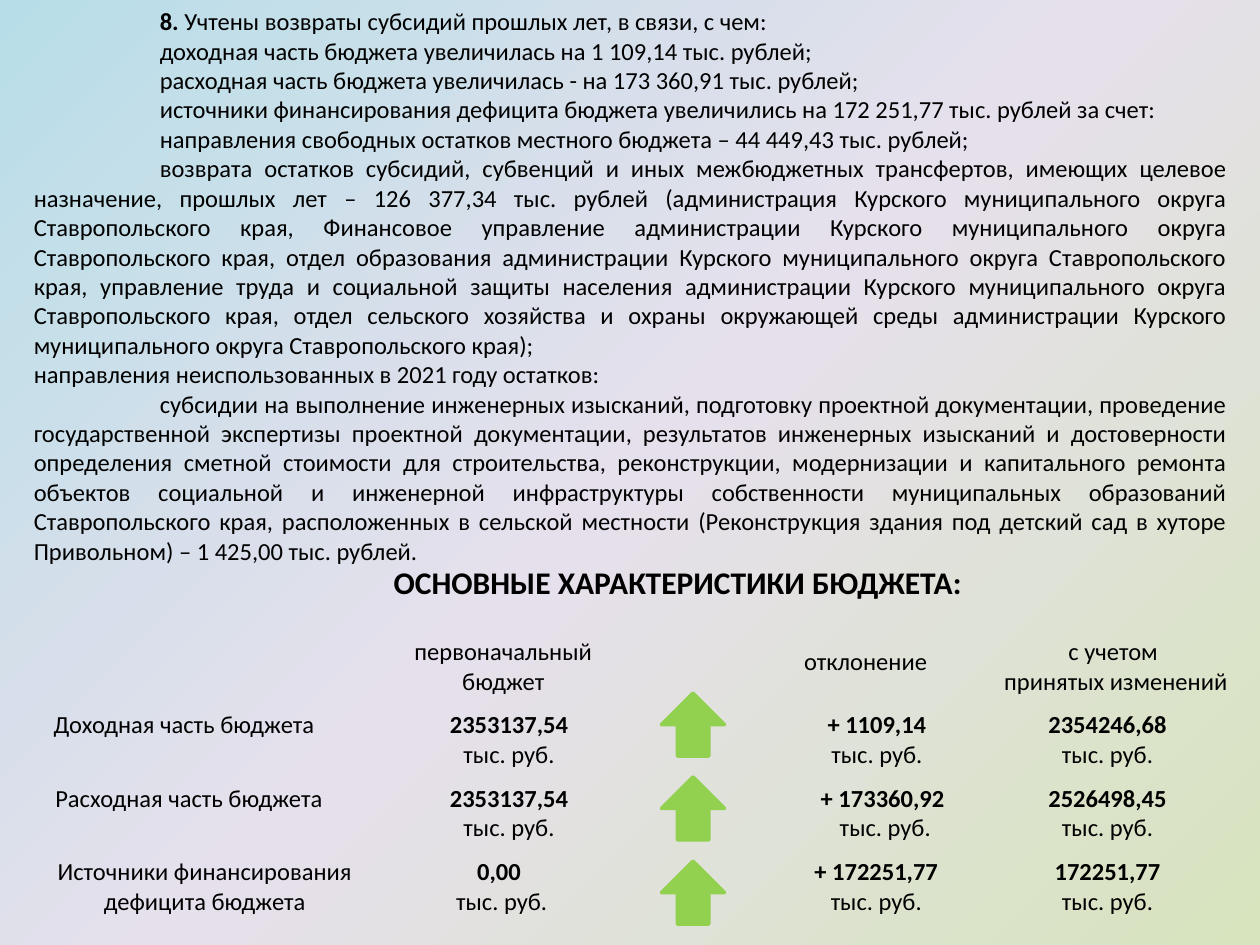
"""Build the slide on returned subsidies and the main budget characteristics."""

from pptx import Presentation
from pptx.dml.color import RGBColor
from pptx.enum.shapes import MSO_SHAPE
from pptx.enum.text import MSO_AUTO_SIZE, PP_ALIGN
from pptx.oxml import parse_xml
from pptx.oxml.ns import nsdecls, qn
from pptx.util import Inches, Pt

COLORS = {"text": "000000", "arrow": "92D050", "green": "D7E4BD", "lilac": "E6E0EC", "blue": "B7DEE8"}
FONT = "Calibri"
GRADIENT = [(0, "green"), (50, "lilac"), (100, "blue")]

NOTE = [
    [("8. ", True), ("Учтены возвраты субсидий прошлых лет, в связи, с чем:", False)],
    "доходная часть бюджета увеличилась на 1 109,14 тыс. рублей;",
    "расходная часть бюджета увеличилась - на 173 360,91 тыс. рублей;",
    "источники финансирования дефицита бюджета увеличились на 172 251,77 тыс. рублей за счет:",
    "направления свободных остатков местного бюджета – 44 449,43 тыс. рублей;",
    "возврата остатков субсидий, субвенций и иных межбюджетных трансфертов, имеющих целевое "
    "назначение, прошлых лет – 126 377,34 тыс. рублей (администрация Курского муниципального округа "
    "Ставропольского края, Финансовое управление администрации Курского муниципального округа "
    "Ставропольского края, отдел образования администрации Курского муниципального округа "
    "Ставропольского края, управление труда и социальной защиты населения администрации Курского "
    "муниципального округа Ставропольского края, отдел сельского хозяйства и охраны окружающей среды "
    "администрации Курского муниципального округа Ставропольского края);",
    "направления неиспользованных в 2021 году остатков:",
    "субсидии на выполнение инженерных изысканий, подготовку проектной документации, проведение "
    "государственной экспертизы проектной документации, результатов инженерных изысканий и "
    "достоверности определения сметной стоимости для строительства, реконструкции, модернизации и "
    "капитального ремонта объектов социальной и инженерной инфраструктуры собственности муниципальных "
    "образований Ставропольского края, расположенных в сельской местности (Реконструкция здания под "
    "детский сад в хуторе Привольном) – 1 425,00 тыс. рублей.",
]
UNINDENTED = {6}
TITLE = "ОСНОВНЫЕ ХАРАКТЕРИСТИКИ БЮДЖЕТА:"
UNIT = "тыс. руб."

HEADERS = [
    (["первоначальный", "бюджет"], 2.83, 5, 2.33),
    (["отклонение"], 6.08, 5.08, 1.58),
    (["с учетом", " принятых изменений"], 7.67, 5, 2.33),
]
ROWS = [
    (("Доходная часть бюджета", 0, 2.92),
     [("2353137,54", UNIT, 3.25, 1.58), ("+ 1109,14", UNIT, 6.25, 1.42), ("2354246,68", UNIT, 7.83, 1.92)]),
    (("Расходная часть бюджета", 0, 3),
     [("2353137,54", UNIT, 3.25, 1.58), ("+ 173360,92", " " + UNIT, 6.17, 1.67), ("2526498,45", UNIT, 8, 1.58)]),
    (("Источники финансирования дефицита бюджета", 0, 3.25),
     [("0,00", " " + UNIT, 3.17, 1.58), ("+ 172251,77", UNIT, 6.08, 1.75), ("172251,77", UNIT, 8, 1.58)]),
]
ROW_TOP, ROW_STEP = 5.58, 7 / 12
ARROW_LEFT, ARROW_TOP, ARROW_STEP, ARROW_SIZE = 5.25, 5.5, 2 / 3, 0.5


def add_text(slide, paragraphs, left, top, width, height, *, size=14, bold=False,
             align=PP_ALIGN.CENTER, wrap=True, indent=0, unindented=()):
    """Add a text box; a paragraph is a string or a list of (text, bold) runs."""
    box = slide.shapes.add_textbox(Inches(left), Inches(top), Inches(width), Inches(height))
    frame = box.text_frame
    frame.word_wrap = wrap
    frame.auto_size = MSO_AUTO_SIZE.SHAPE_TO_FIT_TEXT
    for index, content in enumerate(paragraphs):
        paragraph = frame.add_paragraph() if index else frame.paragraphs[0]
        paragraph.alignment = align
        if indent and index not in unindented:
            properties = paragraph._p.get_or_add_pPr()
            properties.set("marL", "0")
            properties.set("indent", str(Inches(indent)))
        for text, run_bold in [(content, bold)] if isinstance(content, str) else content:
            run = paragraph.add_run()
            run.text = text
            run.font.name = FONT
            run.font.size = Pt(size)
            run.font.bold = run_bold
            run.font.color.rgb = RGBColor.from_string(COLORS["text"])


def add_arrow(slide, top):
    """Add a green arrow that points up."""
    arrow = slide.shapes.add_shape(MSO_SHAPE.DOWN_ARROW, Inches(ARROW_LEFT), Inches(top),
                                   Inches(ARROW_SIZE), Inches(ARROW_SIZE))
    arrow.rotation = 180
    arrow.shadow.inherit = False
    color = RGBColor.from_string(COLORS["arrow"])
    arrow.fill.solid()
    arrow.fill.fore_color.rgb = color
    arrow.line.color.rgb = color
    arrow.line.width = Pt(2)


def set_background(slide):
    """Fill the background with a gradient centred on the bottom right corner."""
    slide.background.fill.solid()
    background = slide.element.find(".//" + qn("p:bgPr"))
    stops = "".join(f'<a:gs pos="{position * 1000}"><a:srgbClr val="{COLORS[name]}"/></a:gs>'
                    for position, name in GRADIENT)
    gradient = parse_xml(
        f'<a:gradFill {nsdecls("a")} rotWithShape="1"><a:gsLst>{stops}</a:gsLst>'
        '<a:path path="circle"><a:fillToRect l="100000" t="100000"/></a:path></a:gradFill>')
    background.replace(background[0], gradient)


def main():
    """Build and save the presentation."""
    presentation = Presentation()
    presentation.slide_width, presentation.slide_height = Inches(10), Inches(7.5)
    slide = presentation.slides.add_slide(presentation.slide_layouts[6])
    set_background(slide)
    add_text(slide, NOTE, 0.17, 0, 9.67, 4.58, align=PP_ALIGN.JUSTIFY, indent=1, unindented=UNINDENTED)
    add_text(slide, [TITLE], 3, 4.42, 4.76, 0.4, size=18, bold=True, wrap=False)
    for lines, left, top, width in HEADERS:
        add_text(slide, lines, left, top, width, 0.57 if len(lines) > 1 else 0.34)
    for index, ((label, label_left, label_width), values) in enumerate(ROWS):
        top = ROW_TOP + index * ROW_STEP
        add_text(slide, [label], label_left, top, label_width, 0.57 if len(label) > 30 else 0.34)
        for value, unit, left, width in values:
            add_text(slide, [[(value, True)], unit], left, top, width, 0.57)
        add_arrow(slide, ARROW_TOP + index * ARROW_STEP)
    presentation.save("out.pptx")


if __name__ == "__main__":
    main()
